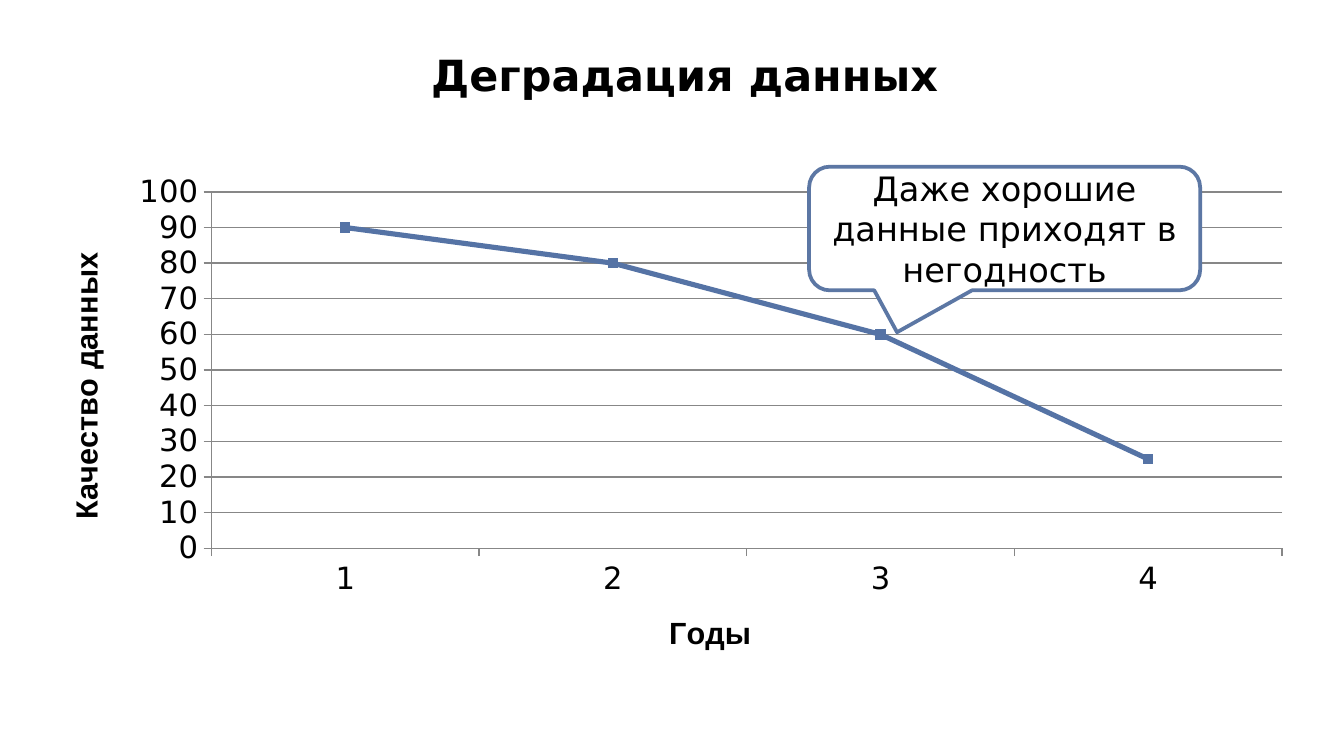
from lxml import etree
from pptx import Presentation
from pptx.chart.data import CategoryChartData
from pptx.dml.color import RGBColor
from pptx.enum.chart import XL_CHART_TYPE, XL_MARKER_STYLE, XL_TICK_MARK
from pptx.enum.shapes import MSO_SHAPE
from pptx.enum.text import MSO_ANCHOR, PP_ALIGN
from pptx.oxml.ns import qn
from pptx.util import Inches, Pt

LINE_MARKERS = XL_CHART_TYPE.LINE_MARKERS
SQUARE = XL_MARKER_STYLE.SQUARE
TICK_OUTSIDE = XL_TICK_MARK.OUTSIDE
CALLOUT = MSO_SHAPE.ROUNDED_RECTANGULAR_CALLOUT
MIDDLE = MSO_ANCHOR.MIDDLE
LEFT, CENTER = PP_ALIGN.LEFT, PP_ALIGN.CENTER

FONT = "DejaVu Sans"
AXIS_TITLE_FONT = "Arial"
CHART_TEXT_SIZE = 16.4
COLORS = {
    "text": "000000",
    "paper": "FFFFFF",
    "series": "5573A5",
    "callout": "5C77A4",
    "grid": "878787",
}


def color(name):
    """Return the named palette colour."""
    return RGBColor.from_string(COLORS[name])


def style_font(font, size, name=FONT, bold=False):
    """Set the face, size, weight and colour of a font."""
    font.name = name
    font.size = Pt(size)
    font.bold = bold
    font.color.rgb = color("text")


def style_line(line, color_name, width):
    """Give a line a solid colour and a width in points."""
    line.color.rgb = color(color_name)
    line.width = Pt(width)


def write_text(shape, text, size, alignment, bold=False):
    """Write one vertically centred paragraph into a shape."""
    frame = shape.text_frame
    frame.word_wrap = True
    frame.vertical_anchor = MIDDLE
    paragraph = frame.paragraphs[0]
    paragraph.alignment = alignment
    run = paragraph.add_run()
    run.text = text
    style_font(run.font, size, bold=bold)


def place_chart_part(element, index, **settings):
    """Give a chart part a manual layout as its child at the index."""
    for layout in element.findall(qn("c:layout")):
        element.remove(layout)
    layout = etree.Element(qn("c:layout"))
    manual = etree.SubElement(layout, qn("c:manualLayout"))
    for tag, value in settings.items():
        etree.SubElement(manual, qn(f"c:{tag}")).set("val", str(value))
    element.insert(index, layout)


def style_axis(axis, title, x, y):
    """Style an axis and place its title at fractions of the chart."""
    axis.major_tick_mark = TICK_OUTSIDE
    style_font(axis.tick_labels.font, CHART_TEXT_SIZE)
    style_line(axis.format.line, "grid", 0.75)
    axis_title = axis.axis_title
    run = axis_title.text_frame.paragraphs[0].add_run()
    run.text = title
    style_font(run.font, CHART_TEXT_SIZE, AXIS_TITLE_FONT, True)
    place_chart_part(axis_title._element, 1, xMode="edge", yMode="edge", x=x, y=y)


def add_quality_chart(slide):
    """Add the line chart of data quality by year."""
    data = CategoryChartData()
    data.categories = ["1", "2", "3", "4"]
    data.add_series("Series 1", [90, 80, 60, 25])
    chart = slide.shapes.add_chart(
        LINE_MARKERS, Inches(0.27), Inches(1.22), Inches(9.45), Inches(3.86), data
    ).chart
    chart.has_title = False
    chart.has_legend = False
    style_font(chart.font, CHART_TEXT_SIZE)

    plot = chart.plots[0]
    plot.vary_by_categories = False
    series = plot.series[0]
    series.smooth = False
    style_line(series.format.line, "series", 2.75)
    marker = series.marker
    marker.style = SQUARE
    marker.size = 5
    marker.format.fill.solid()
    marker.format.fill.fore_color.rgb = color("series")
    style_line(marker.format.line, "series", 0.75)

    style_axis(chart.category_axis, "Годы", 0.494, 0.855)
    value_axis = chart.value_axis
    style_axis(value_axis, "Качество данных", 0.019, 0.16)
    value_axis.minimum_scale = 0
    value_axis.maximum_scale = 100
    value_axis.major_unit = 10
    value_axis.has_major_gridlines = True
    style_line(value_axis.major_gridlines.format.line, "grid", 0.75)
    place_chart_part(
        chart._chartSpace.chart.plotArea, 0, layoutTarget="inner",
        xMode="edge", yMode="edge", x=0.138, y=0.054, w=0.843, h=0.687,
    )


def add_title(slide, text):
    """Add the slide title."""
    title = slide.shapes.add_textbox(
        Inches(3.11), Inches(0.29), Inches(6.64), Inches(0.53)
    )
    write_text(title, text, 23, LEFT, bold=True)


def add_callout(slide, text):
    """Add the callout that points at the third year."""
    callout = slide.shapes.add_shape(
        CALLOUT, Inches(6.02), Inches(1.24), Inches(2.91), Inches(0.92)
    )
    callout.shadow.inherit = False
    for index, value in enumerate((-0.275, 0.839, 0.167)):
        callout.adjustments[index] = value
    callout.fill.solid()
    callout.fill.fore_color.rgb = color("paper")
    style_line(callout.line, "callout", 2)
    write_text(callout, text, 18, CENTER)


def main():
    """Build and save the data degradation slide."""
    presentation = Presentation()
    presentation.slide_width = Inches(10)
    presentation.slide_height = Inches(10) * 9 // 16
    slide = presentation.slides.add_slide(presentation.slide_layouts[6])
    add_quality_chart(slide)
    add_title(slide, "Деградация данных")
    add_callout(slide, "Даже хорошие данные приходят в негодность")
    presentation.save("out.pptx")


if __name__ == "__main__":
    main()
